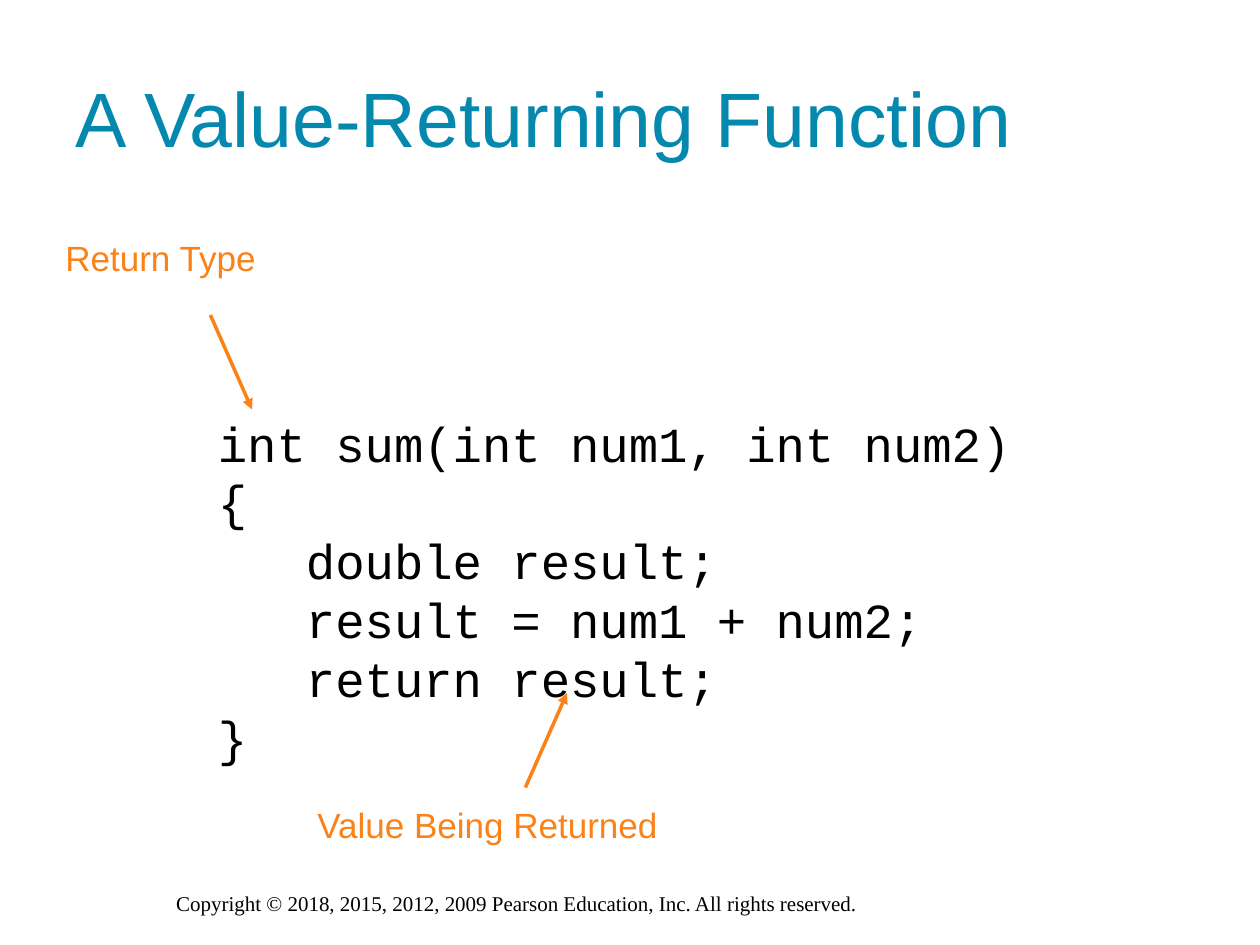
from lxml import etree
from pptx import Presentation
from pptx import util as u
from pptx.dml.color import RGBColor
from pptx.enum import shapes, text
from pptx.oxml.ns import qn

CODE = """int sum(int num1, int num2)
{
   double result;
   result = num1 + num2;
   return result;
}"""
COPYRIGHT = "Copyright © 2018, 2015, 2012, 2009 Pearson Education, Inc. All rights reserved."


def color(value):
    return RGBColor.from_string(value)


def write_text(frame, content, *, size, fill, font="Arial", spacing=None):
    frame.text = content.replace("\n", "\v")
    paragraph = frame.paragraphs[0]
    paragraph.alignment = text.PP_ALIGN.LEFT
    if spacing:
        paragraph.line_spacing = u.Pt(spacing)
    for run in paragraph.runs:
        run.font.name = font
        run.font.size = u.Pt(size)
        run.font.color.rgb = color(fill)


class SlideBuilder:
    title_color = "0488AE"
    accent = "FA8218"
    ink = "000000"

    def __init__(self, presentation):
        self.slide = presentation.slides.add_slide(presentation.slide_layouts[5])

    def title(self, content, left, top, width, height):
        shape = self.slide.shapes.title
        shape.left, shape.top = u.Inches(left), u.Inches(top)
        shape.width, shape.height = u.Inches(width), u.Inches(height)
        shape.text_frame.vertical_anchor = text.MSO_ANCHOR.MIDDLE
        write_text(shape.text_frame, content, size=44, fill=self.title_color)

    def text_box(self, content, left, top, width, height, wrap=True, **style):
        box = self.slide.shapes.add_textbox(
            u.Inches(left), u.Inches(top), u.Inches(width), u.Inches(height)
        )
        box.text_frame.word_wrap = wrap
        write_text(box.text_frame, content, **style)
        return box

    def label(self, content, left, top, width, wrap=True):
        self.text_box(content, left, top, width, 0.44, wrap, size=20, fill=self.accent)

    def code(self, content, left, top, width, height):
        box = self.text_box(content, left, top, width, height,
                            size=28, fill=self.ink, font="Courier New", spacing=33.6)
        box.text_frame.margin_left = u.Inches(0.48)
        box.text_frame.margin_top = u.Inches(0.11)

    def arrow(self, start, end):
        points = [u.Inches(value) for value in (*start, *end)]
        connector = self.slide.shapes.add_connector(shapes.MSO_CONNECTOR.STRAIGHT, *points)
        connector.line.color.rgb = color(self.accent)
        connector.line.width = u.Pt(2)
        line = connector.line._get_or_add_ln()
        etree.SubElement(line, qn("a:tailEnd"), type="triangle")
        etree.SubElement(connector._element.spPr, qn("a:effectLst"))


def main():
    presentation = Presentation()
    presentation.slide_width = u.Inches(10)
    presentation.slide_height = u.Inches(7.5)
    builder = SlideBuilder(presentation)
    builder.text_box(COPYRIGHT, 1.3, 7.02, 5.78, 0.3,
                     size=12, fill=builder.ink, font="Times New Roman")
    builder.title("A Value-Returning Function", 0.5, 0.3, 9, 1.25)
    builder.code(CODE, 1.25, 3.17, 7.17, 2.9)
    builder.label("Return Type", 0.42, 1.83, 1.72, wrap=False)
    builder.arrow((1.67, 2.5), (2, 3.25))
    builder.label("Value Being Returned", 2.42, 6.33, 3.08)
    builder.arrow((4.17, 6.25), (4.5, 5.5))
    presentation.save("out.pptx")


if __name__ == "__main__":
    main()
